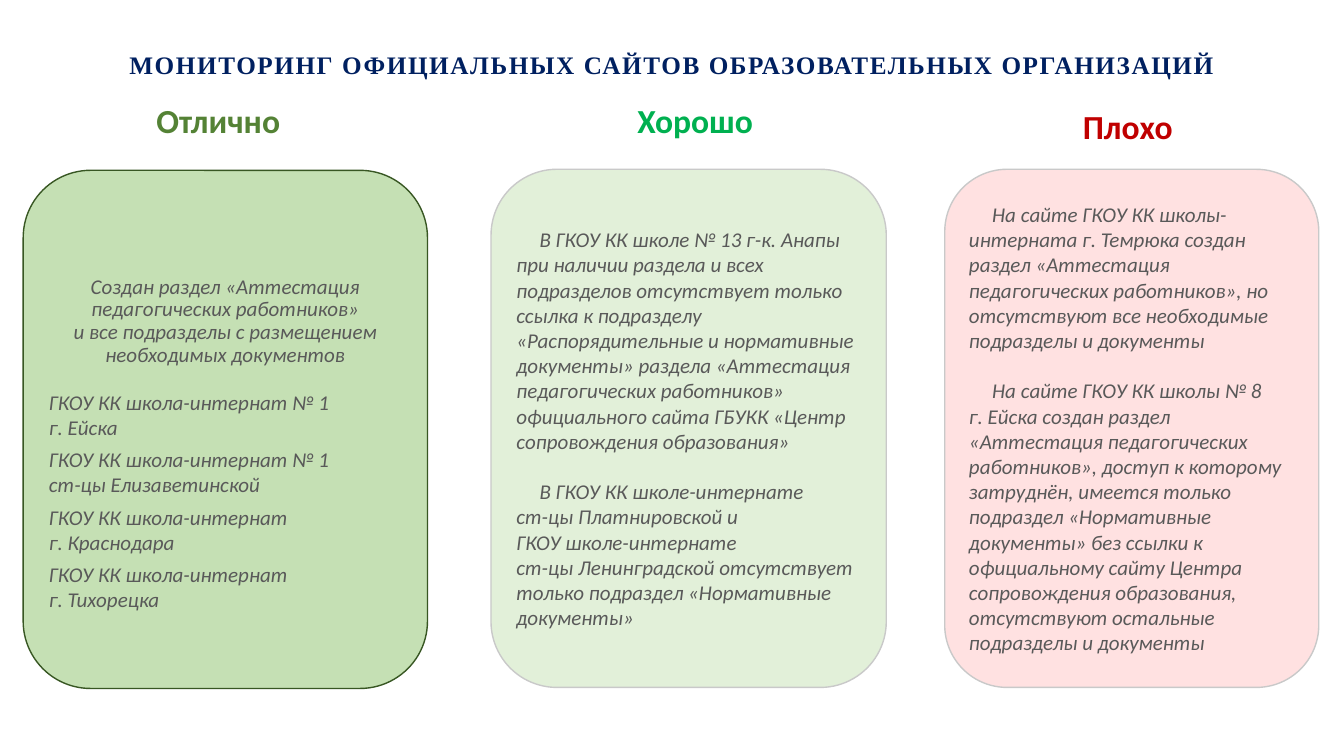
from pptx import Presentation, util as u
from pptx.dml.color import RGBColor
from pptx.enum import shapes, text

WHITE = RGBColor(0xFF, 0xFF, 0xFF)
NAVY = RGBColor(0x00, 0x20, 0x60)
GREY = RGBColor(0x59, 0x59, 0x59)
SILVER = RGBColor(0xC9, 0xC9, 0xC9)
OLIVE = RGBColor(0x54, 0x82, 0x35)
DARK_OLIVE = RGBColor(0x38, 0x57, 0x23)
GREEN = RGBColor(0x00, 0xB0, 0x50)
RED = RGBColor(0xC0, 0x00, 0x00)
LIGHT_GREEN = RGBColor(0xC5, 0xE0, 0xB4)
PALE_GREEN = RGBColor(0xE2, 0xF0, 0xD9)
PALE_RED = RGBColor(0xFF, 0xE1, 0xE1)

FIRST_LINE = 0.23           # indent of a new statement, inches
STATEMENT_GAP = 18          # one text line, points
SCHOOL_GAP = 5

LEAD = dict(align=text.PP_ALIGN.CENTER, spacing=0.9)
STATEMENT = dict(indent=FIRST_LINE)
NEXT_STATEMENT = dict(indent=FIRST_LINE, before=STATEMENT_GAP)
NEXT_SCHOOL = dict(before=SCHOOL_GAP)

# Each rating: heading and its box, card and its box, colours, paragraphs
RATINGS = [
    dict(heading="Отлично", heading_box=(0.28, 0.87, 3.77, 0.65), color=OLIVE,
         card_box=(0.23, 1.69, 4.01, 5.14), fill=LIGHT_GREEN, line=DARK_OLIVE,
         top_inset=0.35,
         paragraphs=[
             ("Создан раздел «Аттестация педагогических работников»", LEAD),
             ("и все подразделы с размещением необходимых документов", LEAD),
             ("ГКОУ КК школа-интернат № 1", dict(before=16)),
             ("г. Ейска", {}),
             ("ГКОУ КК школа-интернат № 1", NEXT_SCHOOL),
             ("ст-цы Елизаветинской", {}),
             ("ГКОУ КК школа-интернат", NEXT_SCHOOL),
             ("г. Краснодара", {}),
             ("ГКОУ КК школа-интернат", NEXT_SCHOOL),
             ("г. Тихорецка", {}),
         ]),
    dict(heading="Хорошо", heading_box=(5.01, 0.93, 3.77, 0.52), color=GREEN,
         card_box=(4.87, 1.68, 3.92, 5.14), fill=PALE_GREEN, line=SILVER,
         top_inset=0.06,
         paragraphs=[
             ("В ГКОУ КК школе № 13 г-к. Анапы при наличии раздела и всех подразделов "
              "отсутствует только ссылка к подразделу «Распорядительные и нормативные "
              "документы» раздела «Аттестация педагогических работников» официального "
              "сайта ГБУКК «Центр сопровождения образования»", STATEMENT),
             ("В ГКОУ КК школе-интернате", NEXT_STATEMENT),
             ("ст-цы Платнировской и", {}),
             ("ГКОУ школе-интернате", {}),
             ("ст-цы Ленинградской отсутствует только подраздел «Нормативные "
              "документы»", {}),
         ]),
    dict(heading="Плохо", heading_box=(9.33, 0.98, 3.71, 0.54), color=RED,
         card_box=(9.37, 1.68, 3.71, 5.14), fill=PALE_RED, line=SILVER,
         top_inset=0.06,
         paragraphs=[
             ("На сайте ГКОУ КК школы-интерната г. Темрюка создан раздел «Аттестация "
              "педагогических работников», но отсутствуют все необходимые подразделы "
              "и документы", STATEMENT),
             ("На сайте ГКОУ КК школы № 8", NEXT_STATEMENT),
             ("г. Ейска создан раздел «Аттестация педагогических работников», доступ "
              "к которому затруднён, имеется только подраздел «Нормативные документы» "
              "без ссылки к официальному сайту Центра сопровождения образования, "
              "отсутствуют остальные подразделы и документы", {}),
         ]),
]


def write(paragraph, words, size=15, font="Calibri", color=GREY, bold=False,
          italic=False, align=text.PP_ALIGN.LEFT, spacing=1.0, before=0,
          indent=0, tracking=0):
    """Fill one paragraph with formatted text."""
    paragraph.alignment = align
    paragraph.line_spacing = spacing
    paragraph.space_before = u.Pt(before)
    if indent:
        properties = paragraph._p.get_or_add_pPr()
        properties.set("marL", "0")
        properties.set("indent", str(u.Inches(indent)))
    run = paragraph.add_run()
    run.text = words
    run.font.size, run.font.name = u.Pt(size), font
    run.font.bold, run.font.italic = bold, italic
    run.font.color.rgb = color
    if tracking:
        run._r.get_or_add_rPr().set("spc", str(round(tracking * 100)))


def set_frame(frame, left=0.1, top=0.05, right=0.1, bottom=0.05):
    """Wrap the text, centre it vertically and set its insets."""
    frame.word_wrap = True
    frame.auto_size = text.MSO_AUTO_SIZE.NONE
    frame.vertical_anchor = text.MSO_ANCHOR.MIDDLE
    frame.margin_left, frame.margin_top = u.Inches(left), u.Inches(top)
    frame.margin_right, frame.margin_bottom = u.Inches(right), u.Inches(bottom)


def add_panel(slide, kind, box, line, fill=None):
    """Add an outlined shape, filled only when a fill is given."""
    panel = slide.shapes.add_shape(kind, *map(u.Inches, box))
    panel.shadow.inherit = False
    if fill is None:
        panel.fill.background()
    else:
        panel.fill.solid()
        panel.fill.fore_color.rgb = fill
    panel.line.color.rgb = line
    panel.line.width = u.Pt(1)
    return panel


def place_title(slide, left, top, width, height):
    title = slide.shapes.title
    title.left, title.top = u.Inches(left), u.Inches(top)
    title.width, title.height = u.Inches(width), u.Inches(height)
    set_frame(title.text_frame, 0.13, 0.07, 0.13, 0.07)
    write(title.text_frame.paragraphs[0],
          "МОНИТОРИНГ ОФИЦИАЛЬНЫХ САЙТОВ ОБРАЗОВАТЕЛЬНЫХ ОРГАНИЗАЦИЙ",
          size=18, font="Times New Roman", color=NAVY, bold=True,
          align=text.PP_ALIGN.CENTER, tracking=1.13)


def add_heading(slide, rating):
    heading = add_panel(slide, shapes.MSO_SHAPE.RECTANGLE,
                        rating["heading_box"], WHITE)
    set_frame(heading.text_frame)
    write(heading.text_frame.paragraphs[0], rating["heading"], size=24,
          color=rating["color"], bold=True, align=text.PP_ALIGN.CENTER)


def add_card(slide, rating):
    card = add_panel(slide, shapes.MSO_SHAPE.ROUNDED_RECTANGLE,
                     rating["card_box"], rating["line"], rating["fill"])
    frame = card.text_frame
    set_frame(frame, 0.06, rating["top_inset"], 0.06, 0.06)
    for number, (words, style) in enumerate(rating["paragraphs"]):
        paragraph = frame.add_paragraph() if number else frame.paragraphs[0]
        write(paragraph, words, italic=True, **style)


def main():
    deck = Presentation()
    deck.slide_width, deck.slide_height = u.Inches(13.33), u.Inches(7.5)
    slide = deck.slides.add_slide(deck.slide_layouts.get_by_name("Title Only"))

    place_title(slide, 0.65, 0.28, 12.03, 0.71)
    for rating in RATINGS:
        add_heading(slide, rating)
        add_card(slide, rating)

    deck.save("out.pptx")


if __name__ == "__main__":
    main()
